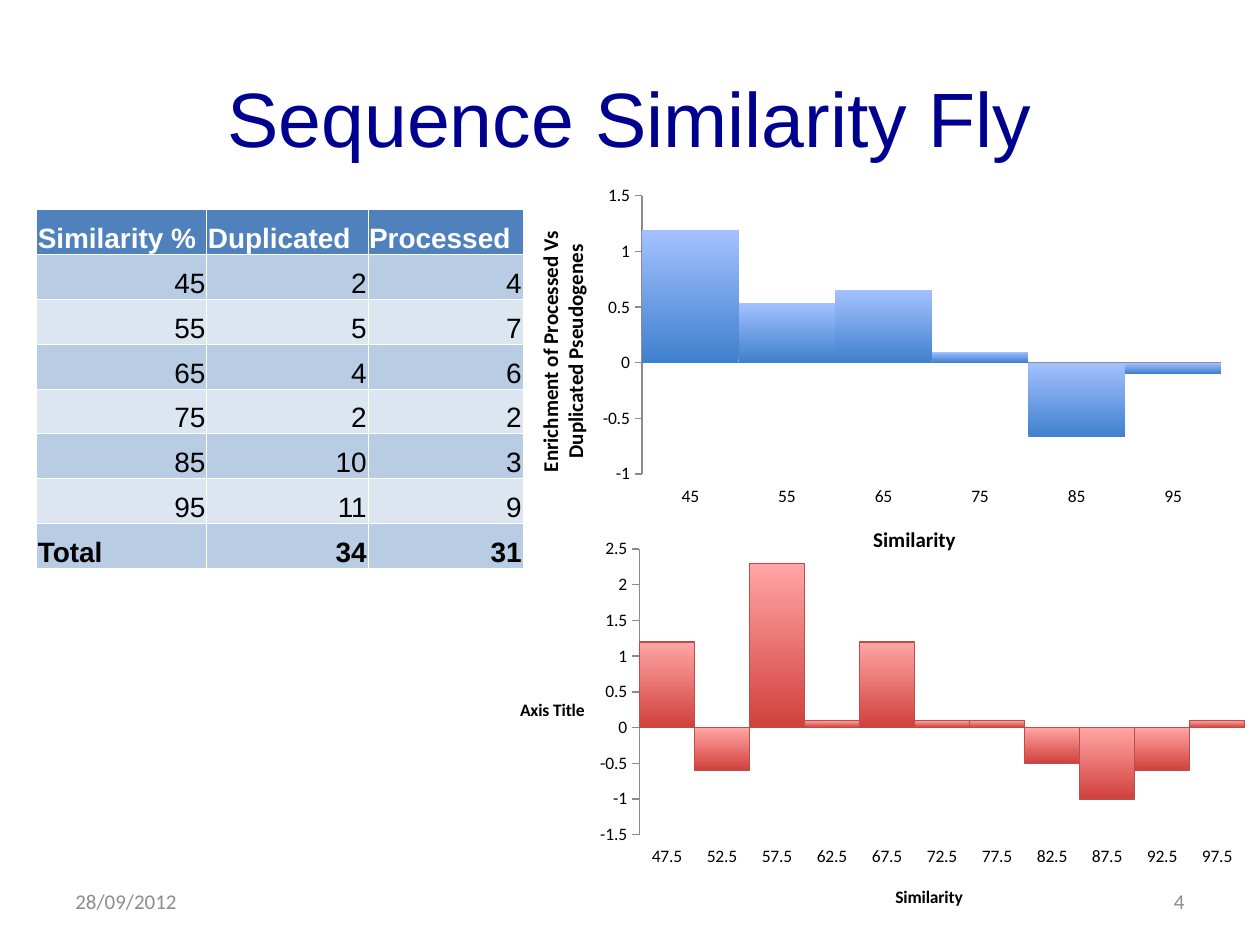
from lxml import etree
from pptx import Presentation
from pptx.chart.data import CategoryChartData
from pptx.dml.color import RGBColor
from pptx.enum.chart import XL_CHART_TYPE, XL_TICK_LABEL_POSITION, XL_TICK_MARK
from pptx.enum.text import MSO_ANCHOR, PP_ALIGN
from pptx.oxml import parse_xml
from pptx.oxml.ns import nsdecls, qn
from pptx.util import Inches, Pt

LEFT, CENTER, RIGHT = PP_ALIGN.LEFT, PP_ALIGN.CENTER, PP_ALIGN.RIGHT
MIDDLE, BOTTOM = MSO_ANCHOR.MIDDLE, MSO_ANCHOR.BOTTOM
COLUMN = XL_CHART_TYPE.COLUMN_CLUSTERED
LOW = XL_TICK_LABEL_POSITION.LOW
NONE, OUT = XL_TICK_MARK.NONE, XL_TICK_MARK.OUTSIDE
BLACK, WHITE, GRAY = "000000", "FFFFFF", "8C8C8C"
HEAD, DARK, PALE = "4F81BD", "B8CCE4", "DCE6F1"

ROWS = [
    ("Similarity %", "Duplicated", "Processed"),
    (45, 2, 4), (55, 5, 7), (65, 4, 6), (75, 2, 2), (85, 10, 3), (95, 11, 9),
    ("Total", 34, 31),
]
# Chart layouts are shares of the chart box: left, top[, width, height]
BLUE = dict(
    cats=["45", "55", "65", "75", "85", "95"],
    vals=[1.19, 0.54, 0.65, 0.1, -0.67, -0.1],
    low=-1, high=1.5, size=12, turn=-90, fade=("3F80CD", "A4C1FF"), edge=None,
    label="Enrichment of Processed Vs Duplicated Pseudogenes",
    plot=(0.19, 0.04, 0.79, 0.71), foot=(0.5, 0.87), side=(0.04, 0.12),
)
RED = dict(
    cats=[str(47.5 + 5 * i) for i in range(11)],
    vals=[1.2, -0.6, 2.3, 0.1, 1.2, 0.1, 0.1, -0.5, -1, -0.6, 0.1],
    low=-1.5, high=2.5, size=10, turn=0, fade=("D1403C", "FFA6A5"), edge="BF4C48",
    label="Axis Title",
    plot=(0.19, 0.05, 0.79, 0.72), foot=(0.52, 0.89), side=(0.03, 0.42),
)


def rgb(code):
    return RGBColor.from_string(code)


def add_run(para, text, size, font, color, bold=False):
    run = para.add_run()
    run.text = text
    run.font.size, run.font.name, run.font.bold = Pt(size), font, bold
    run.font.color.rgb = rgb(color)


def add_text(slide, box, text, size, font, color, align):
    frame = slide.shapes.add_textbox(*map(Inches, box)).text_frame
    frame.word_wrap = True
    frame.vertical_anchor = MIDDLE
    para = frame.paragraphs[0]
    para.alignment = align
    add_run(para, text, size, font, color)


def add_borders(cell):
    props = cell._tc.get_or_add_tcPr()
    for side in "LRTB":
        line = etree.SubElement(props, qn(f"a:ln{side}"), w=str(Pt(0.5)))
        fill = etree.SubElement(line, qn("a:solidFill"))
        etree.SubElement(fill, qn("a:srgbClr"), val=WHITE)


def add_grid(slide, left, top, widths, height):
    shape = slide.shapes.add_table(
        len(ROWS), len(widths), Inches(left), Inches(top),
        Inches(sum(widths)), Inches(height * len(ROWS)))
    table = shape.table
    for col, width in zip(table.columns, widths):
        col.width = Inches(width)
    for r, row in enumerate(ROWS):
        head, total = r == 0, r == len(ROWS) - 1
        for c, value in enumerate(row):
            cell = table.cell(r, c)
            cell.margin_left = cell.margin_right = cell.margin_top = Inches(0.01)
            cell.margin_bottom = 0
            cell.vertical_anchor = BOTTOM
            add_borders(cell)
            cell.fill.solid()
            cell.fill.fore_color.rgb = rgb(HEAD if head else DARK if r % 2 else PALE)
            para = cell.text_frame.paragraphs[0]
            para.line_spacing = 1.3
            para.alignment = LEFT if isinstance(value, str) else RIGHT
            add_run(para, str(value), 16, "Arial", WHITE if head else BLACK,
                    head or total)


def make_layout(spot):
    inner = '<c:layoutTarget val="inner"/>' if len(spot) == 4 else ""
    modes = "".join(f'<c:{k}Mode val="edge"/>' for k in "xy")
    sizes = "".join(f'<c:{k} val="{v}"/>' for k, v in zip("xywh", spot))
    return parse_xml(f'<c:layout {nsdecls("c")}><c:manualLayout>{inner}{modes}'
                     f'{sizes}</c:manualLayout></c:layout>')


def add_title(axis, text, size, spot, turn=0):
    frame = axis.axis_title.text_frame
    add_run(frame.paragraphs[0], text, size, "Calibri", BLACK, True)
    body = frame._txBody.find(qn("a:bodyPr"))
    body.set("rot", str(turn * 60000))
    body.set("vert", "horz")
    title = axis.axis_title._element
    for old in title.findall(qn("c:layout")):
        title.remove(old)
    title.find(qn("c:tx")).addnext(make_layout(spot))


def add_bars(slide, box, look):
    data = CategoryChartData()
    data.categories = look["cats"]
    data.add_series("Series 1", look["vals"])
    chart = slide.shapes.add_chart(COLUMN, *map(Inches, box), data).chart
    chart.has_title = chart.has_legend = False
    chart.font.size, chart.font.name = Pt(10), "Calibri"
    chart.font.color.rgb = rgb(BLACK)

    # Axes
    cat, val = chart.category_axis, chart.value_axis
    for axis, tick in ((cat, NONE), (val, OUT)):
        axis.has_major_gridlines = False
        axis.major_tick_mark, axis.minor_tick_mark = tick, NONE
        axis.format.line.color.rgb = rgb(GRAY)
    cat.tick_label_position = LOW
    val.minimum_scale, val.maximum_scale = look["low"], look["high"]
    val.major_unit = 0.5
    add_title(cat, "Similarity", look["size"], look["foot"])
    add_title(val, look["label"], look["size"], look["side"], look["turn"])

    # Bars
    plot = chart.plots[0]
    plot.gap_width = 0
    plot.vary_by_categories = False
    bars = plot.series[0]
    bars.invert_if_negative = False
    fill = bars.format.fill
    fill.gradient()
    fill.gradient_angle = 90
    for stop, color, place in zip(fill.gradient_stops, look["fade"], (0, 1)):
        stop.color.rgb = rgb(color)
        stop.position = place
    if look["edge"]:
        bars.format.line.color.rgb = rgb(look["edge"])
        bars.format.line.width = Pt(0.75)
    else:
        bars.format.line.fill.background()

    # Plot area
    area = chart._chartSpace.chart.plotArea
    for old in area.findall(qn("c:layout")):
        area.remove(old)
    area.insert(0, make_layout(look["plot"]))


def main():
    deck = Presentation()
    deck.slide_width, deck.slide_height = Inches(10), Inches(7.5)
    slide = deck.slides.add_slide(deck.slide_layouts[6])
    # Title and footer
    add_text(slide, (0.5, 0.3, 9, 1.25), "Sequence Similarity Fly",
             44, "Arial", "000090", CENTER)
    add_text(slide, (0.5, 6.95, 2.33, 0.4), "28/09/2012", 12, "Calibri", GRAY, LEFT)
    add_text(slide, (7.17, 6.95, 2.33, 0.4), "4", 12, "Calibri", GRAY, RIGHT)
    # Counts and charts
    add_grid(slide, 0.29, 1.66, (1.35, 1.28, 1.23), 0.33)
    add_bars(slide, (3.99, 1.43, 5.82, 3.11), BLUE)
    add_bars(slide, (3.92, 4.2, 6.08, 3.15), RED)
    deck.save("out.pptx")


if __name__ == "__main__":
    main()
